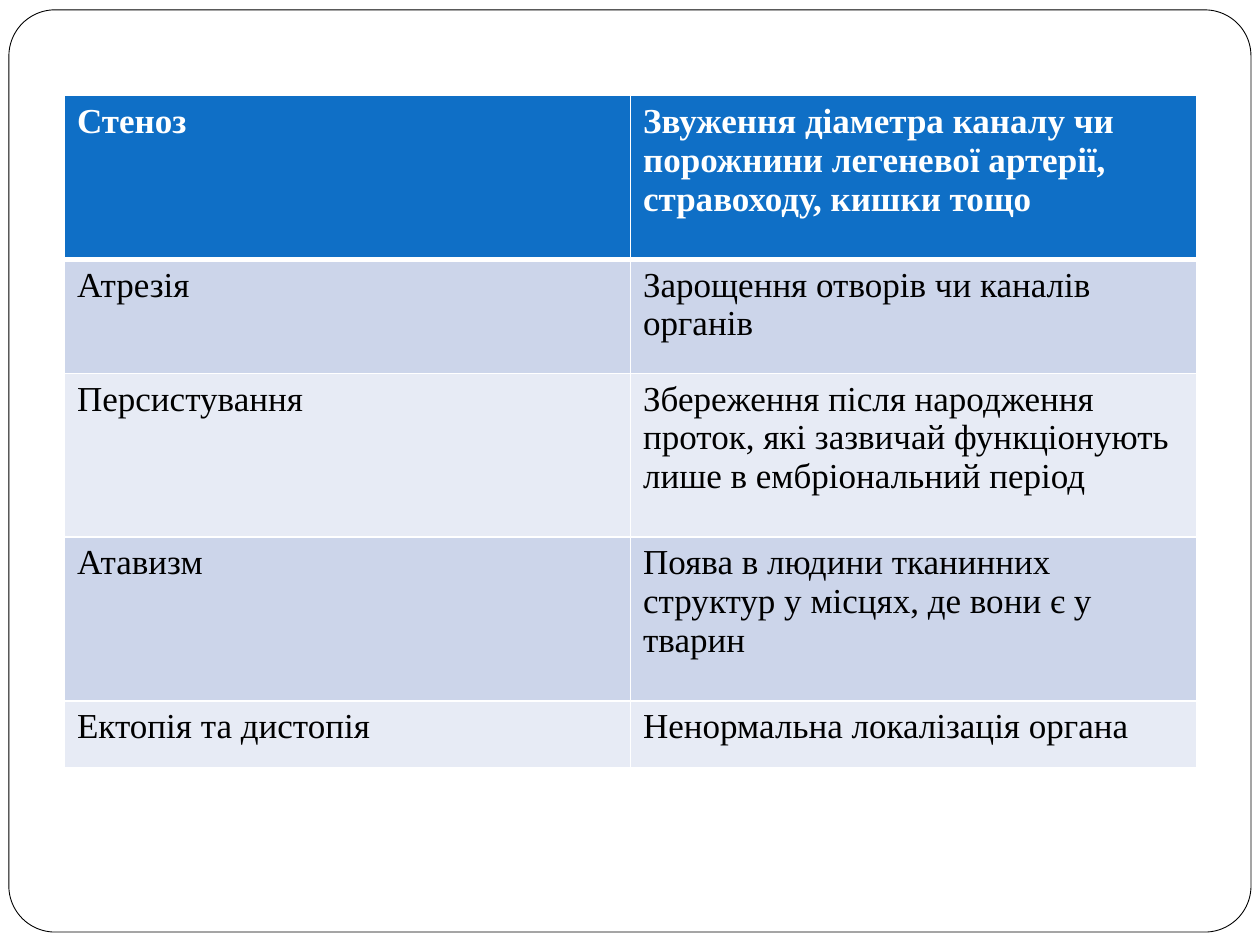
"""Builds a slide with a table of developmental anomalies."""
import dataclasses

import lxml.etree
import pptx
import pptx.dml.color
import pptx.enum.shapes
import pptx.oxml.ns
import pptx.util
from pptx.util import Cm


@dataclasses.dataclass(frozen=True)
class Theme:
    font: str = "Times New Roman"
    size: int = 20
    paper: str = "FFFFFF"
    ink: str = "000000"
    header: str = "0F6FC6"
    bands: tuple = ("CCD5EA", "E7EBF5")
    frame_line: float = 0.5
    grid_line: int = 1
    header_line: int = 3


THEME = Theme()
ROWS = [
    ("Стеноз", "Звуження діаметра каналу чи порожнини легеневої артерії, стравоходу, кишки тощо"),
    ("Атрезія", "Зарощення отворів чи каналів органів"),
    ("Персистування", "Збереження після народження проток, які зазвичай функціонують лише в ембріональний період"),
    ("Атавизм", "Поява в людини тканинних структур у місцях, де вони є у тварин"),
    ("Ектопія та дистопія", "Ненормальна локалізація органа"),
]
ROW_HEIGHTS = (3.3, 2.3, 3.3, 3.3, 1.34)
COLUMN_WIDTH = 11.41


def paint(fill, color):
    fill.solid()
    fill.fore_color.rgb = pptx.dml.color.RGBColor.from_string(color)


def add_frame(page):
    frame = page.shapes.add_shape(
        pptx.enum.shapes.MSO_SHAPE.ROUNDED_RECTANGLE, Cm(0.18), Cm(0.2), Cm(25.04), Cm(18.59))
    frame.adjustments[0] = 0.05
    frame.shadow.inherit = False
    paint(frame.fill, THEME.paper)
    paint(frame.line.fill, THEME.ink)
    frame.line.width = pptx.util.Pt(THEME.frame_line)


def set_border(cell, side, width):
    properties = cell._tc.get_or_add_tcPr()
    qualify = pptx.oxml.ns.qn
    line = lxml.etree.SubElement(properties, qualify(f"a:ln{side}"), w=str(pptx.util.Pt(width)))
    solid = lxml.etree.SubElement(line, qualify("a:solidFill"))
    lxml.etree.SubElement(solid, qualify("a:srgbClr"), val=THEME.paper)


def fill_cell(cell, text, row):
    is_header = row == 0
    widths = {
        "L": THEME.grid_line,
        "R": THEME.grid_line,
        "T": THEME.header_line if row == 1 else THEME.grid_line,
        "B": THEME.header_line if is_header else THEME.grid_line,
    }
    for side, width in widths.items():
        set_border(cell, side, width)
    paint(cell.fill, THEME.header if is_header else THEME.bands[(row - 1) % 2])
    cell.text = text
    font = cell.text_frame.paragraphs[0].font
    font.name = THEME.font
    font.size = pptx.util.Pt(THEME.size)
    font.bold = is_header
    paint(font.fill, THEME.paper if is_header else THEME.ink)


def add_anomaly_table(page):
    columns = len(ROWS[0])
    table = page.shapes.add_table(
        len(ROWS), columns, Cm(1.3), Cm(1.93),
        Cm(columns * COLUMN_WIDTH), Cm(sum(ROW_HEIGHTS))).table
    for column in table.columns:
        column.width = Cm(COLUMN_WIDTH)
    for row, (texts, height) in enumerate(zip(ROWS, ROW_HEIGHTS)):
        table.rows[row].height = Cm(height)
        for column, text in enumerate(texts):
            fill_cell(table.cell(row, column), text, row)


def main():
    deck = pptx.Presentation()
    deck.slide_width, deck.slide_height = Cm(25.4), Cm(19.05)
    page = deck.slides.add_slide(deck.slide_layouts[6])
    paint(page.background.fill, THEME.paper)
    add_frame(page)
    add_anomaly_table(page)
    deck.save("out.pptx")


if __name__ == "__main__":
    main()
